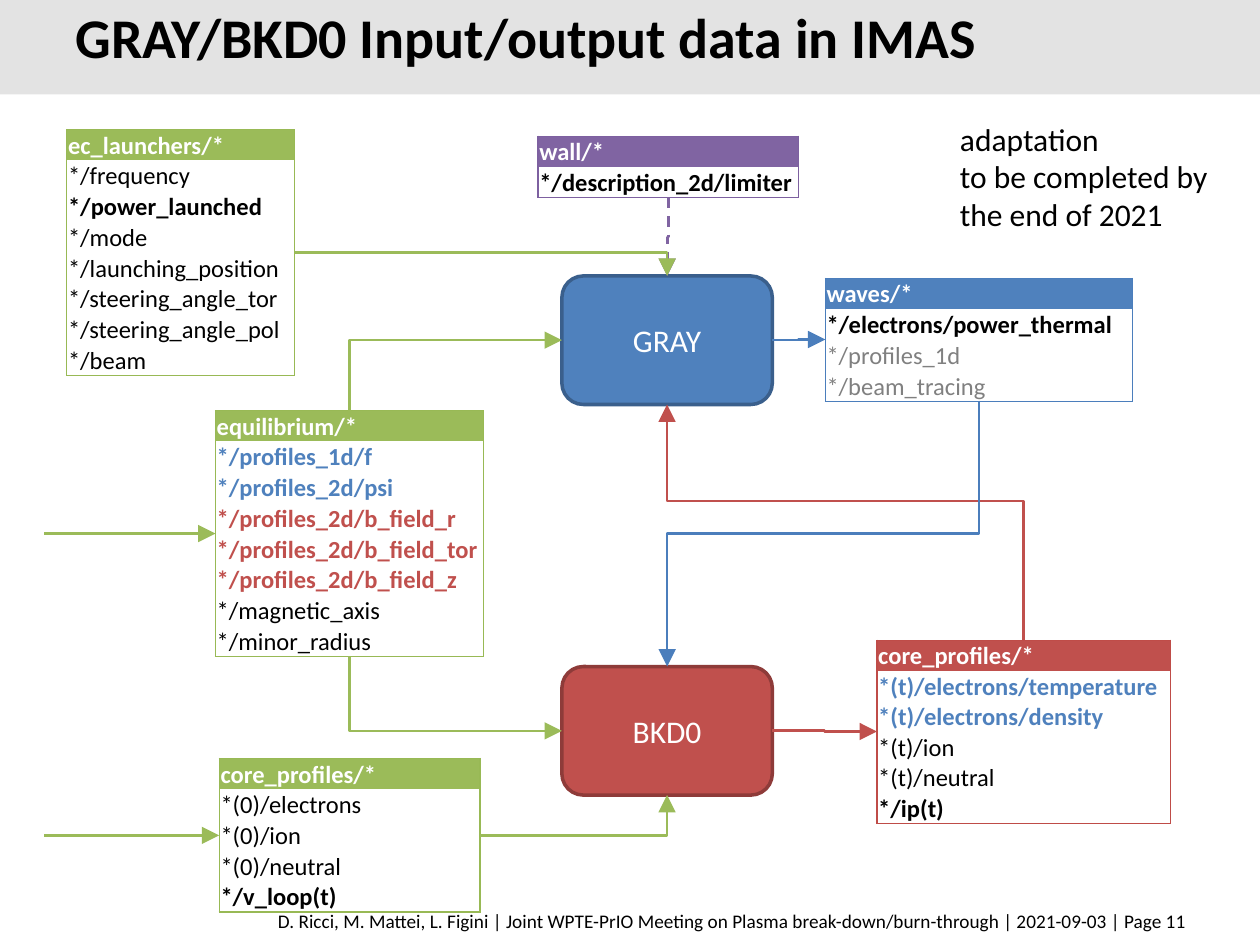
"""Builds the slide on the input and output data of GRAY and BKD0."""
from lxml.etree import SubElement
from pptx import Presentation
from pptx.dml.color import RGBColor
from pptx.enum.dml import MSO_LINE
from pptx.enum.shapes import MSO_CONNECTOR as Link, MSO_SHAPE as Shape
from pptx.enum.text import MSO_ANCHOR as Anchor, PP_ALIGN as Align
from pptx.oxml.ns import qn
from pptx.util import Inches, Pt

BLACK, WHITE, GREY = "000000", "FFFFFF", "808080"
GREEN, PURPLE, BLUE, RED = "9BBB59", "8064A2", "4F81BD", "C0504D"
EDGES = {GREEN: "98B955", PURPLE: "7D60A0", BLUE: "4B7EBC", RED: "BF4C48"}
NO_STYLE = "{2D5ABB26-0587-4C30-8999-92F81FD0307C}"
TOP, LEFT, BOTTOM, RIGHT = range(4)

TITLE = "GRAY/BKD0 Input/output data in IMAS"
NOTE = ["adaptation", "to be completed by the end of 2021"]
FOOTER = ("D. Ricci, M. Mattei, L. Figini | Joint WPTE-PrIO Meeting on Plasma "
          "break-down/burn-through | 2021-09-03 | Page 11")

CODES = {
    "GRAY": ((4.46, 2.19, 1.67, 1.02), BLUE, "3A5F8C"),
    "BKD0": ((4.46, 5.29, 1.67, 1.02), RED, "8E3B39"),
}

PLAIN, BOLD, FADED = (BLACK, False), (BLACK, True), (GREY, False)
FOR_GRAY, FOR_BKD0 = (BLUE, True), (RED, True)
TABLES = {
    "launchers": ((0.53, 1.03, 1.81, 1.95), GREEN, "ec_launchers/*", [
        ("*/frequency", PLAIN), ("*/power_launched", BOLD), ("*/mode", PLAIN),
        ("*/launching_position", PLAIN), ("*/steering_angle_tor", PLAIN),
        ("*/steering_angle_pol", PLAIN), ("*/beam", PLAIN)]),
    "equilibrium": ((1.71, 3.26, 2.13, 1.95), GREEN, "equilibrium/*", [
        ("*/profiles_1d/f", FOR_GRAY), ("*/profiles_2d/psi", FOR_GRAY),
        ("*/profiles_2d/b_field_r", FOR_BKD0),
        ("*/profiles_2d/b_field_tor", FOR_BKD0),
        ("*/profiles_2d/b_field_z", FOR_BKD0),
        ("*/magnetic_axis", PLAIN), ("*/minor_radius", PLAIN)]),
    "wall": ((4.27, 1.08, 2.07, 0.49), PURPLE, "wall/*", [
        ("*/description_2d/limiter", BOLD)]),
    "waves": ((6.55, 2.21, 2.44, 0.97), BLUE, "waves/*", [
        ("*/electrons/power_thermal", BOLD), ("*/profiles_1d", FADED),
        ("*/beam_tracing", FADED)]),
    "profiles out": ((6.96, 5.08, 2.33, 1.45), RED, "core_profiles/*", [
        ("*(t)/electrons/temperature\n*(t)/electrons/density", FOR_GRAY),
        ("*(t)/ion", PLAIN), ("*(t)/neutral", PLAIN), ("*/ip(t)", BOLD)]),
    "profiles in": ((1.74, 6.02, 2.07, 1.22), GREEN, "core_profiles/*", [
        ("*(0)/electrons", PLAIN), ("*(0)/ion", PLAIN),
        ("*(0)/neutral", PLAIN), ("*/v_loop(t)", BOLD)]),
}

FLOWS = [
    ("wall", BOTTOM, "GRAY", TOP, PURPLE, 0.5),
    ("launchers", RIGHT, "GRAY", TOP, GREEN, None),
    ("equilibrium", TOP, "GRAY", LEFT, GREEN, None),
    ("profiles out", TOP, "GRAY", BOTTOM, RED, 0.59),
    ("GRAY", RIGHT, "waves", LEFT, EDGES[BLUE], 0.5),
    ("waves", BOTTOM, "BKD0", TOP, EDGES[BLUE], 0.5),
    ("profiles in", RIGHT, "BKD0", BOTTOM, GREEN, None),
    ("BKD0", RIGHT, "profiles out", LEFT, RED, 0.5),
    ("equilibrium", BOTTOM, "BKD0", LEFT, GREEN, None),
]
INPUTS = ["equilibrium", "profiles in"]
INPUT_START = 0.35


def rgb(value):
    return RGBColor.from_string(value)


def write(frame, lines, size=14, color=BLACK, bold=False, align=Align.LEFT, spacing=None):
    frame.word_wrap = True
    for index, line in enumerate(lines):
        para = frame.add_paragraph() if index else frame.paragraphs[0]
        para.alignment = align
        if spacing:
            para.line_spacing = Pt(spacing)
        span = para.add_run()
        span.text = line
        span.font.name, span.font.size, span.font.bold = "Calibri", Pt(size), bold
        span.font.color.rgb = rgb(color)


def add_text(page, place, lines, anchor=Anchor.MIDDLE, **style):
    box = page.shapes.add_textbox(*map(Inches, place))
    box.text_frame.vertical_anchor = anchor
    write(box.text_frame, lines, **style)


def add_block(page, kind, place, fill, edge=None):
    block = page.shapes.add_shape(kind, *map(Inches, place))
    block.shadow.inherit = False
    block.fill.solid()
    block.fill.fore_color.rgb = rgb(fill)
    if edge:
        block.line.color.rgb, block.line.width = rgb(edge), Pt(2)
    else:
        block.line.fill.background()
    return block


def add_edge(cell, side, color):
    line = SubElement(cell._tc.get_or_add_tcPr(), qn(f"a:ln{side}"), w=str(Pt(0.75)))
    fill = SubElement(line, qn("a:solidFill"))
    SubElement(fill, qn("a:srgbClr"), val=color)


def add_data(page, place, color, header, entries):
    rows = [(header, (WHITE, True)), *entries]
    frame = page.shapes.add_table(len(rows), 1, *map(Inches, place))
    table = frame.table
    table._tbl.tblPr.find(qn("a:tableStyleId")).text = NO_STYLE
    line_count = sum(len(text.split("\n")) for text, _ in rows)
    for index, (text, (ink, bold)) in enumerate(rows):
        lines = text.split("\n")
        table.rows[index].height = Inches(place[3] * len(lines) / line_count)
        cell = table.cell(index, 0)
        cell.margin_left = cell.margin_right = cell.margin_top = Inches(0.01)
        cell.margin_bottom = 0
        cell.vertical_anchor = Anchor.BOTTOM
        sides = "LR" + "T" * (index == 0) + "B" * (index == len(rows) - 1)
        for side in sides:
            add_edge(cell, side, EDGES[color])
        if index:
            cell.fill.background()
        else:
            cell.fill.solid()
            cell.fill.fore_color.rgb = rgb(color)
        write(cell.text_frame, lines, color=ink, bold=bold)
    return frame


def style_arrow(arrow, color):
    arrow.line.color.rgb, arrow.line.width = rgb(color), Pt(1.5)
    if color == PURPLE:
        arrow.line.dash_style = MSO_LINE.DASH
    SubElement(arrow.line._get_or_add_ln(), qn("a:tailEnd"), type="triangle", w="lg", len="lg")
    SubElement(arrow._element.spPr, qn("a:effectLst"))


def side_middle(item, side):
    x = {LEFT: item.left, RIGHT: item.left + item.width}.get(side, item.left + item.width // 2)
    y = {TOP: item.top, BOTTOM: item.top + item.height}.get(side, item.top + item.height // 2)
    return x, y


def add_flow(page, source, source_side, target, target_side, color, bend):
    (x1, y1), (x2, y2) = side_middle(source, source_side), side_middle(target, target_side)
    arrow = page.shapes.add_connector(Link.ELBOW, x1, y1, x2, y2)
    arrow.begin_connect(source, source_side)
    arrow.end_connect(target, target_side)
    upright = source_side in (TOP, BOTTOM)
    width, height = abs(x2 - x1), abs(y2 - y1)
    flips = (x2 < x1, y2 < y1)
    if upright:
        width, height = height, width
        flips = (y2 < y1, x2 > x1)
    arrow.left, arrow.top = (x1 + x2 - width) // 2, (y1 + y2 - height) // 2
    arrow.width, arrow.height = width, height
    frame = arrow._element.spPr.find(qn("a:xfrm"))
    frame.set("rot", str(90 * 60000 * upright))
    for name, flip in zip(("flipH", "flipV"), flips):
        frame.set(name, str(int(flip)))
    shape = arrow._element.spPr.find(qn("a:prstGeom"))
    if bend is None:
        shape.set("prst", "bentConnector2")
    else:
        SubElement(shape.find(qn("a:avLst")), qn("a:gd"), name="adj1",
                   fmla=f"val {round(bend * 100000)}")
    style_arrow(arrow, color)


def add_input(page, target):
    x, y = side_middle(target, LEFT)
    arrow = page.shapes.add_connector(Link.STRAIGHT, Inches(INPUT_START), y, x, y)
    arrow.end_connect(target, LEFT)
    style_arrow(arrow, GREEN)


def main():
    deck = Presentation()
    deck.slide_width, deck.slide_height = Inches(10), Inches(7.5)
    page = deck.slides.add_slide(deck.slide_layouts[6])
    add_block(page, Shape.RECTANGLE, (0, 0, 10, 0.75), "E3E3E3")
    add_text(page, (0.5, 0.08, 8.25, 0.5), [TITLE], size=32, bold=True, spacing=32)
    items = {}
    for name, (place, fill, edge) in CODES.items():
        items[name] = add_block(page, Shape.ROUNDED_RECTANGLE, place, fill, edge)
        write(items[name].text_frame, [name], size=18, color=WHITE, align=Align.CENTER)
    for name, content in TABLES.items():
        items[name] = add_data(page, *content)
    for source, source_side, target, target_side, color, bend in FLOWS:
        add_flow(page, items[source], source_side, items[target], target_side, color, bend)
    for name in INPUTS:
        add_input(page, items[name])
    add_text(page, (7.52, 0.9, 2.25, 1.01), NOTE, anchor=Anchor.TOP, size=18)
    add_text(page, (0.51, 7.16, 9.01, 0.29), [FOOTER], size=11, align=Align.RIGHT)
    deck.save("out.pptx")


if __name__ == "__main__":
    main()
